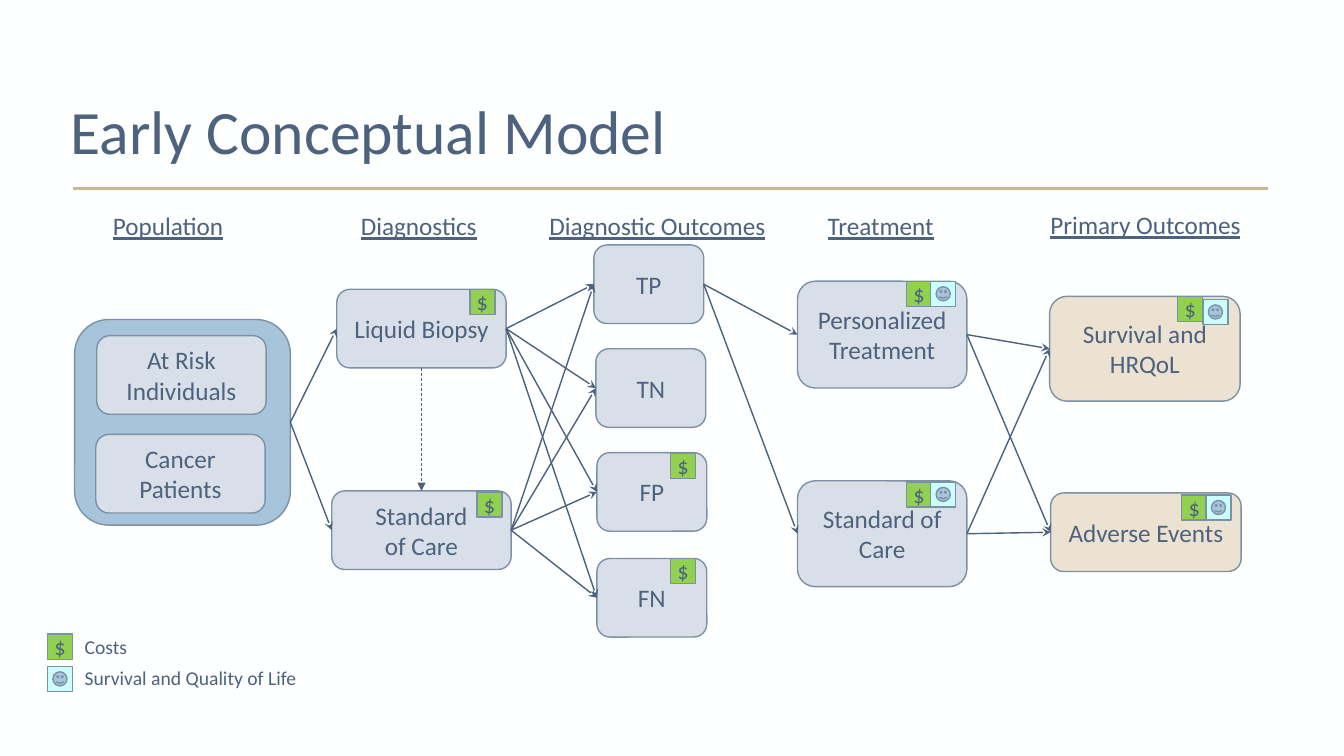
from dataclasses import dataclass

from lxml.etree import SubElement
from pptx import Presentation
from pptx.dml.color import RGBColor
from pptx.enum.dml import MSO_LINE
from pptx.enum.shapes import MSO_CONNECTOR, MSO_SHAPE
from pptx.enum.text import MSO_ANCHOR, MSO_AUTO_SIZE, PP_ALIGN
from pptx.oxml.ns import qn
from pptx.shapes.autoshape import Shape
from pptx.shapes.connector import Connector
from pptx.slide import Slide
from pptx.text.text import TextFrame
from pptx.util import Inches, Pt

FONT = "Calibri"
BACKGROUND = RGBColor(0xFE, 0xFF, 0xFF)
INK = RGBColor(0x4C, 0x62, 0x7F)
RULE = RGBColor(0xCC, 0xB7, 0x8F)
OUTLINE = RGBColor(0x7C, 0x91, 0xA3)
BLUE = RGBColor(0xA7, 0xC4, 0xDD)
GREY = RGBColor(0xD9, 0xDF, 0xE8)
SAND = RGBColor(0xEB, 0xE2, 0xD2)
GREEN = RGBColor(0x92, 0xD0, 0x50)
CYAN = RGBColor(0xCB, 0xFF, 0xFF)

BADGE = 0.25
FACE = 0.14
TOP, LEFT, BOTTOM, RIGHT = range(4)


@dataclass
class Box:
    key: str
    text: str
    left: float
    top: float
    width: float = 1.68
    height: float = 0.78
    fill: RGBColor = GREY


@dataclass
class Label:
    text: str
    left: float
    top: float
    width: float
    height: float = 0.4
    size: int = 18
    underline: bool = False


@dataclass
class Badge:
    left: float
    top: float


BOXES = [
    Box("population", "", 0.74, 3.17, 2.14, 2.04, BLUE),
    Box("at risk", "At Risk Individuals", 0.96, 3.33),
    Box("cancer", "Cancer Patients", 0.95, 4.31),
    Box("biopsy", "Liquid Biopsy", 3.34, 2.87),
    Box("usual test", "Standard\nof Care", 3.29, 4.87, 1.78),
    Box("TP", "TP", 5.89, 2.43, 1.09),
    Box("TN", "TN", 5.91, 3.46, 1.09),
    Box("FP", "FP", 5.92, 4.49, 1.09),
    Box("FN", "FN", 5.92, 5.54, 1.09),
    Box("personalized", "Personalized Treatment", 7.91, 2.79, height=1.06),
    Box("usual care", "Standard of Care", 7.91, 4.77, height=1.05),
    Box("survival", "Survival and HRQoL", 10.41, 2.94, 1.89, 1.04, SAND),
    Box("adverse", "Adverse Events", 10.42, 4.89, 1.89, fill=SAND),
]

# Each source box leads to every one of its targets
FLOWS = {
    "population": ["biopsy", "usual test"],
    "biopsy": ["TP", "TN", "FP", "FN"],
    "usual test": ["TP", "TN", "FP", "FN"],
    "TP": ["personalized", "usual care"],
    "personalized": ["survival", "adverse"],
    "usual care": ["survival", "adverse"],
}

LABELS = [
    Label("Population", 1.02, 2.04, 1.55, underline=True),
    Label("Diagnostics", 3.48, 2.04, 1.55, underline=True),
    Label("Diagnostic Outcomes", 5.35, 2.04, 2.85, underline=True),
    Label("Treatment", 8.11, 2.04, 1.55, underline=True),
    Label("Primary Outcomes", 10.32, 2.03, 2.85, underline=True),
    Label("Costs", 0.74, 6.25, 1.39, 0.34, 14),
    Label("Survival and Quality of Life", 0.74, 6.56, 2.54, 0.34, 14),
]

COST_BADGES = [
    Badge(0.47, 6.29), Badge(4.66, 2.87), Badge(4.73, 4.88),
    Badge(6.65, 4.5), Badge(6.65, 5.54), Badge(8.99, 2.79),
    Badge(8.99, 4.78), Badge(11.68, 2.94), Badge(11.72, 4.91),
]
LIFE_BADGES = [
    Badge(0.47, 6.61), Badge(9.23, 2.79), Badge(9.23, 4.78),
    Badge(11.93, 2.97), Badge(11.96, 4.91),
]


def write(tf: TextFrame, text: str, size: int, align: PP_ALIGN = PP_ALIGN.LEFT,
          underline: bool = False) -> None:
    for i, line in enumerate(text.split("\n")):
        p = tf.paragraphs[0] if i == 0 else tf.add_paragraph()
        p.alignment = align
        r = p.add_run()
        r.text = line
        r.font.name, r.font.size = FONT, Pt(size)
        r.font.color.rgb = INK
        if underline:
            r.font.underline = True


def add_filled(s: Slide, kind: MSO_SHAPE, left: float, top: float, width: float,
               height: float, fill: RGBColor) -> Shape:
    sp = s.shapes.add_shape(kind, Inches(left), Inches(top), Inches(width), Inches(height))
    sp.shadow.inherit = False
    sp.fill.solid()
    sp.fill.fore_color.rgb = fill
    sp.line.color.rgb = OUTLINE
    sp.line.width = Pt(1)
    return sp


def add_box(s: Slide, box: Box) -> Shape:
    sp = add_filled(s, MSO_SHAPE.ROUNDED_RECTANGLE, box.left, box.top,
                    box.width, box.height, box.fill)
    if box.text:
        tf = sp.text_frame
        tf.word_wrap = True
        tf.vertical_anchor = MSO_ANCHOR.MIDDLE
        write(tf, box.text, 18, PP_ALIGN.CENTER)
    return sp


def add_label(s: Slide, label: Label) -> None:
    sp = s.shapes.add_textbox(Inches(label.left), Inches(label.top),
                              Inches(label.width), Inches(label.height))
    tf = sp.text_frame
    tf.word_wrap = True
    tf.auto_size = MSO_AUTO_SIZE.SHAPE_TO_FIT_TEXT
    write(tf, label.text, label.size, underline=label.underline)


def add_line(s: Slide, x1: float, y1: float, x2: float, y2: float,
             color: RGBColor, width: float) -> Connector:
    line = s.shapes.add_connector(MSO_CONNECTOR.STRAIGHT, Inches(x1), Inches(y1),
                                  Inches(x2), Inches(y2))
    line.line.color.rgb = color
    line.line.width = Pt(width)
    SubElement(line._element.spPr, qn("a:effectLst"))
    return line


def add_arrow(s: Slide, start: Shape, end: Shape, sides: tuple[int, int] = (RIGHT, LEFT),
              width: float = 1, head: str = "stealth", dashed: bool = False) -> None:
    arrow = add_line(s, 0, 0, 0, 0, INK, width)
    arrow.begin_connect(start, sides[0])
    arrow.end_connect(end, sides[1])
    if dashed:
        arrow.line.dash_style = MSO_LINE.DASH
    SubElement(arrow.line._get_or_add_ln(), qn("a:tailEnd"), type=head)


def add_cost_badge(s: Slide, badge: Badge) -> None:
    add_filled(s, MSO_SHAPE.RECTANGLE, badge.left, badge.top, BADGE, BADGE, GREEN)
    add_label(s, Label("$", badge.left - 0.03, badge.top - 0.06, 0.21, 0.37, 16))


def add_life_badge(s: Slide, badge: Badge) -> None:
    inset = (BADGE - FACE) / 2
    add_filled(s, MSO_SHAPE.RECTANGLE, badge.left, badge.top, BADGE, BADGE, CYAN)
    add_filled(s, MSO_SHAPE.SMILEY_FACE, badge.left + inset, badge.top + inset,
               FACE, FACE, BLUE)


def main() -> None:
    prs = Presentation()
    prs.slide_width, prs.slide_height = Inches(13.33), Inches(7.5)
    s = prs.slides.add_slide(prs.slide_layouts[5])
    s.background.fill.solid()
    s.background.fill.fore_color.rgb = BACKGROUND

    # Title and rule
    title = s.shapes.title
    title.left, title.top = Inches(0.6), Inches(0.09)
    title.width, title.height = Inches(9.25), Inches(1.62)
    title.text_frame.vertical_anchor = MSO_ANCHOR.BOTTOM
    write(title.text_frame, "Early Conceptual Model", 44)
    title.text_frame.paragraphs[0].line_spacing = 0.9
    add_line(s, 0.72, 1.87, 12.58, 1.87, RULE, 1.5)

    # Boxes and flow arrows
    shapes = {box.key: add_box(s, box) for box in BOXES}
    for source, targets in FLOWS.items():
        for target in targets:
            add_arrow(s, shapes[source], shapes[target])
    add_arrow(s, shapes["biopsy"], shapes["usual test"], (BOTTOM, TOP),
              0.5, "triangle", dashed=True)

    # Headings, legend and badges
    for label in LABELS:
        add_label(s, label)
    for badge in COST_BADGES:
        add_cost_badge(s, badge)
    for badge in LIFE_BADGES:
        add_life_badge(s, badge)

    prs.save("out.pptx")


if __name__ == "__main__":
    main()
